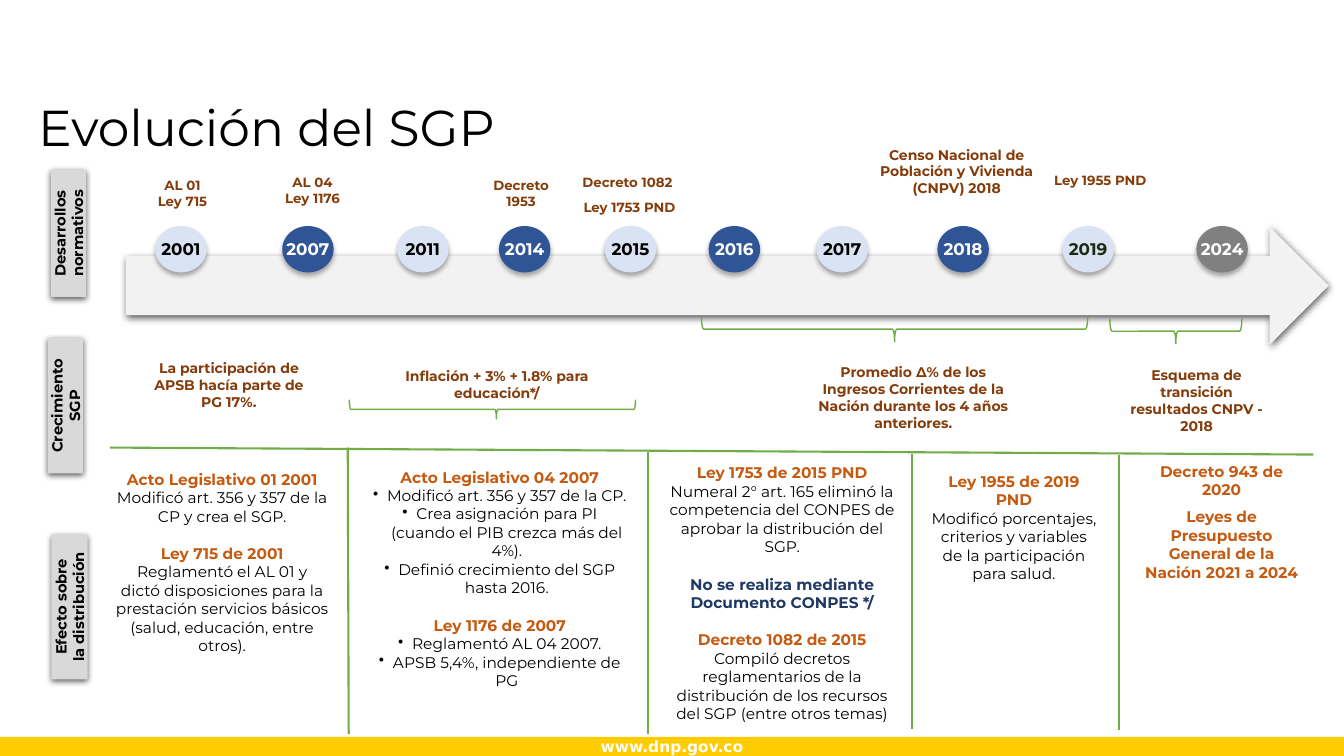
from collections import namedtuple

from lxml.etree import SubElement
from pptx import Presentation
from pptx.dml.color import RGBColor
from pptx.enum.shapes import MSO_CONNECTOR, MSO_SHAPE
from pptx.enum.text import MSO_ANCHOR, MSO_AUTO_SIZE, PP_ALIGN
from pptx.oxml.ns import qn
from pptx.util import Pt

BLACK = RGBColor(0x00, 0x00, 0x00)
WHITE = RGBColor(0xFF, 0xFF, 0xFF)
YELLOW = RGBColor(0xFF, 0xCC, 0x02)
PALE_GRAY = RGBColor(0xF2, 0xF2, 0xF2)
LIGHT_GRAY = RGBColor(0xD9, 0xD9, 0xD9)
GRAY = RGBColor(0x80, 0x80, 0x80)
BROWN = RGBColor(0x84, 0x3C, 0x0B)
ORANGE = RGBColor(0xC5, 0x5A, 0x11)
NAVY = RGBColor(0x20, 0x38, 0x64)
BLUE = RGBColor(0x2F, 0x55, 0x97)
PALE_BLUE = RGBColor(0xDA, 0xE3, 0xF3)
DARK_GREEN = RGBColor(0x1C, 0x2B, 0x12)
GREEN = RGBColor(0x70, 0xAD, 0x47)

Style = namedtuple("Style", "size color bold bullet before font",
                   defaults=(True, False, 0, "Montserrat"))
Shadow = namedtuple("Shadow", "alpha blur distance")

TITLE = Style(36, BLACK, False)
TAG = Style(10.5, BLACK)
EVENT = Style(9.5, BROWN)
GROWTH = Style(10, BROWN)
HEADING = Style(11, ORANGE)
NEXT_HEADING = Style(11, ORANGE, before=13.4)
LAST_HEADING = Style(11, ORANGE, before=6)
BODY = Style(11, BLACK, False)
BULLET = Style(11, BLACK, False, True)
REMARK = Style(11, NAVY, before=13.4)
FOOTER = Style(11, WHITE, font="DejaVu Sans")

DEEP_SHADOW = Shadow(63, 4.5, 1.5)
SOFT_SHADOW = Shadow(32, 3.5, 2.2)

TAGS = [
    ((3.6, 154.1, 90.7, 25.2), ["Desarrollos normativos"]),
    ((-1.4, 277.2, 96.5, 25.2), ["Crecimiento", "SGP"]),
    ((-2.2, 420.5, 103.7, 25.9), ["Efecto sobre", "la distribución"]),
]
YEARS = [
    ("2001", 110.9, PALE_BLUE, BLACK),
    ("2007", 201.6, BLUE, WHITE),
    ("2011", 283.7, PALE_BLUE, BLACK),
    ("2014", 356.4, BLUE, WHITE),
    ("2015", 432, PALE_BLUE, BLACK),
    ("2016", 506.2, BLUE, WHITE),
    ("2017", 583.2, PALE_BLUE, BLACK),
    ("2018", 669.6, BLUE, WHITE),
    ("2019", 758.9, PALE_BLUE, DARK_GREEN),
    ("2024", 854.6, GRAY, WHITE),
]
LABELS = [
    ((95.8, 123.1, 69.1, 30.2), EVENT, ["AL 01", "Ley 715"]),
    ((185.8, 121, 74.9, 30.2), EVENT, ["AL 04", "Ley 1176"]),
    ((338.4, 123.1, 67.7, 30.2), EVENT, ["Decreto", "1953"]),
    ((406.8, 121, 82.8, 18.7), EVENT, ["Decreto 1082"]),
    ((408.2, 139, 82.8, 18.7), EVENT, ["Ley 1753 PND"]),
    ((615.6, 100.8, 135.4, 43.9), GROWTH,
     ["Censo Nacional de Población y Vivienda (CNPV) 2018"]),
    ((744.5, 119.5, 82.8, 18.7), EVENT, ["Ley 1955 PND"]),
    ((103, 253.4, 121, 43.9), GROWTH,
     ["La participación de APSB hacía parte de PG 17%."]),
    ((259.2, 259.2, 191.5, 31.7), GROWTH, ["Inflación + 3% + 1.8% para educación*/"]),
    ((577.4, 256.3, 149.8, 55.4), GROWTH,
     ["Promedio Δ% de los Ingresos Corrientes de la Nación durante los 4 años anteriores."]),
    ((794.2, 258.5, 121, 43.9), GROWTH, ["Esquema de transición resultados CNPV - 2018"]),
]
EFFECTS = [
    ((75.6, 331.9, 166.3, 140.4), MSO_ANCHOR.TOP, [
        ("Acto Legislativo 01 2001", HEADING),
        ("Modificó art. 356 y 357 de la CP y crea el SGP.", BODY),
        ("Ley 715 de 2001", NEXT_HEADING),
        ("Reglamentó el AL 01 y dictó disposiciones para la prestación servicios "
         "básicos (salud, educación, entre otros).", BODY),
    ]),
    ((256.3, 330.5, 201.6, 154.1), MSO_ANCHOR.TOP, [
        ("Acto Legislativo 04 2007", HEADING),
        ("Modificó art. 356 y 357 de la CP.", BULLET),
        ("Crea asignación para PI (cuando el PIB crezca más del 4%).", BULLET),
        ("Definió crecimiento del SGP hasta 2016.", BULLET),
        ("Ley 1176 de 2007", NEXT_HEADING),
        ("Reglamentó AL 04 2007.", BULLET),
        ("APSB 5,4%, independiente de PG", BULLET),
    ]),
    ((470.2, 327.6, 177.1, 193.7), MSO_ANCHOR.TOP, [
        ("Ley 1753 de 2015 PND", HEADING),
        ("Numeral 2° art. 165 eliminó la competencia del CONPES de aprobar la "
         "distribución del SGP.", BODY),
        ("No se realiza mediante Documento CONPES */", REMARK),
        ("Decreto 1082 de 2015", NEXT_HEADING),
        ("Compiló decretos reglamentarios de la distribución de los recursos del SGP "
         "(entre otros temas)", BODY),
    ]),
    ((657.4, 333.4, 133.9, 74.2), MSO_ANCHOR.TOP, [
        ("Ley 1955 de 2019 PND", HEADING),
        ("Modificó porcentajes, criterios y variables de la participación para salud.", BODY),
    ]),
    ((807.1, 332.6, 131, 79.9), MSO_ANCHOR.MIDDLE, [
        ("Decreto 943 de 2020", HEADING),
        ("Leyes de Presupuesto General de la Nación 2021 a 2024", LAST_HEADING),
    ]),
]
BRACES = [
    ((344.9, 190.1, 13.7, 204.5), 0.514),
    ((630, 97.2, 18, 275.8), 0.5),
    ((830.9, 189.4, 18, 94.3), 0.5),
]
DIVIDERS = [
    (78.5, 319.7, 938.2, 324.7),
    (248.4, 319.7, 249.1, 524.2),
    (463, 322.6, 463, 524.2),
    (651.6, 324, 651.6, 520.6),
    (799.2, 324.7, 799.2, 521.3),
]


class SlideBuilder:
    def __init__(self, presentation):
        self.slide = presentation.slides.add_slide(presentation.slide_layouts[6])

    def fill_frame(self, frame, paragraphs, alignment=PP_ALIGN.CENTER):
        for index, (text, style) in enumerate(paragraphs):
            paragraph = frame.add_paragraph() if index else frame.paragraphs[0]
            paragraph.alignment = alignment
            if style.before:
                paragraph.space_before = Pt(style.before)
            if style.bullet:
                properties = paragraph._p.get_or_add_pPr()
                properties.set("marL", str(Pt(10)))
                properties.set("indent", str(-Pt(10)))
                SubElement(properties, qn("a:buChar"), char="•")
            run = paragraph.add_run()
            run.text = text
            run.font.name = style.font
            run.font.size = Pt(style.size)
            run.font.bold = style.bold
            run.font.color.rgb = style.color

    def text(self, box, paragraphs, anchor=MSO_ANCHOR.TOP, alignment=PP_ALIGN.CENTER):
        frame = self.slide.shapes.add_textbox(*map(Pt, box)).text_frame
        frame.word_wrap = True
        frame.auto_size = MSO_AUTO_SIZE.SHAPE_TO_FIT_TEXT
        frame.vertical_anchor = anchor
        self.fill_frame(frame, paragraphs, alignment)
        return frame

    def shape(self, kind, box, fill, shadow=None, paragraphs=(), wrap=True, rotation=0):
        shape = self.slide.shapes.add_shape(kind, *map(Pt, box))
        shape.rotation = rotation
        shape.fill.solid()
        shape.fill.fore_color.rgb = fill
        shape.line.fill.background()
        shape.shadow.inherit = False
        if shadow:
            effects = shape._element.spPr.find(qn("a:effectLst"))
            outer = SubElement(effects, qn("a:outerShdw"), blurRad=str(Pt(shadow.blur)),
                               dist=str(Pt(shadow.distance)), dir="5400000",
                               algn="ctr", rotWithShape="0")
            color = SubElement(outer, qn("a:srgbClr"), val=str(BLACK))
            SubElement(color, qn("a:alpha"), val=str(shadow.alpha * 1000))
        shape.text_frame.word_wrap = wrap
        shape.text_frame.vertical_anchor = MSO_ANCHOR.MIDDLE
        self.fill_frame(shape.text_frame, paragraphs)

    def brace(self, box, tip):
        brace = self.slide.shapes.add_shape(MSO_SHAPE.RIGHT_BRACE, *map(Pt, box))
        brace.rotation = 90
        brace._element.spPr.find(qn("a:xfrm")).set("flipV", "1")
        brace.adjustments[0] = 0.083
        brace.adjustments[1] = tip
        brace.fill.background()
        brace.line.color.rgb = GREEN
        brace.line.width = Pt(1)
        brace.shadow.inherit = False

    def line(self, ends):
        line = self.slide.shapes.add_connector(MSO_CONNECTOR.STRAIGHT, *map(Pt, ends))
        line.line.color.rgb = GREEN
        line.line.width = Pt(1.5)
        SubElement(line._element.spPr, qn("a:effectLst"))


def main():
    presentation = Presentation()
    presentation.slide_width = Pt(960)
    presentation.slide_height = Pt(540)
    builder = SlideBuilder(presentation)

    builder.shape(MSO_SHAPE.RECTANGLE, (0, 526.3, 960, 13.7), YELLOW,
                  paragraphs=[("www.dnp.gov.co", FOOTER)], wrap=False)
    builder.shape(MSO_SHAPE.RIGHT_ARROW, (90, 162, 859, 84.2), PALE_GRAY, DEEP_SHADOW)
    title = builder.text((20.2, 69.8, 430.6, 43.9), [("Evolución del SGP", TITLE)],
                         alignment=PP_ALIGN.LEFT)
    title.paragraphs[0].line_spacing = 0.9
    for box, lines in TAGS:
        builder.shape(MSO_SHAPE.RECTANGLE, box, LIGHT_GRAY, DEEP_SHADOW,
                      [(line, TAG) for line in lines], rotation=270)
    for year, left, fill, color in YEARS:
        builder.shape(MSO_SHAPE.OVAL, (left, 161.5, 36.7, 33.1), fill, SOFT_SHADOW,
                      [(year, Style(12, color))], wrap=False)
    for box, style, lines in LABELS:
        builder.text(box, [(line, style) for line in lines])
    for box, tip in BRACES:
        builder.brace(box, tip)
    for ends in DIVIDERS:
        builder.line(ends)
    for box, anchor, paragraphs in EFFECTS:
        builder.text(box, paragraphs, anchor)
    presentation.save("out.pptx")


if __name__ == "__main__":
    main()
